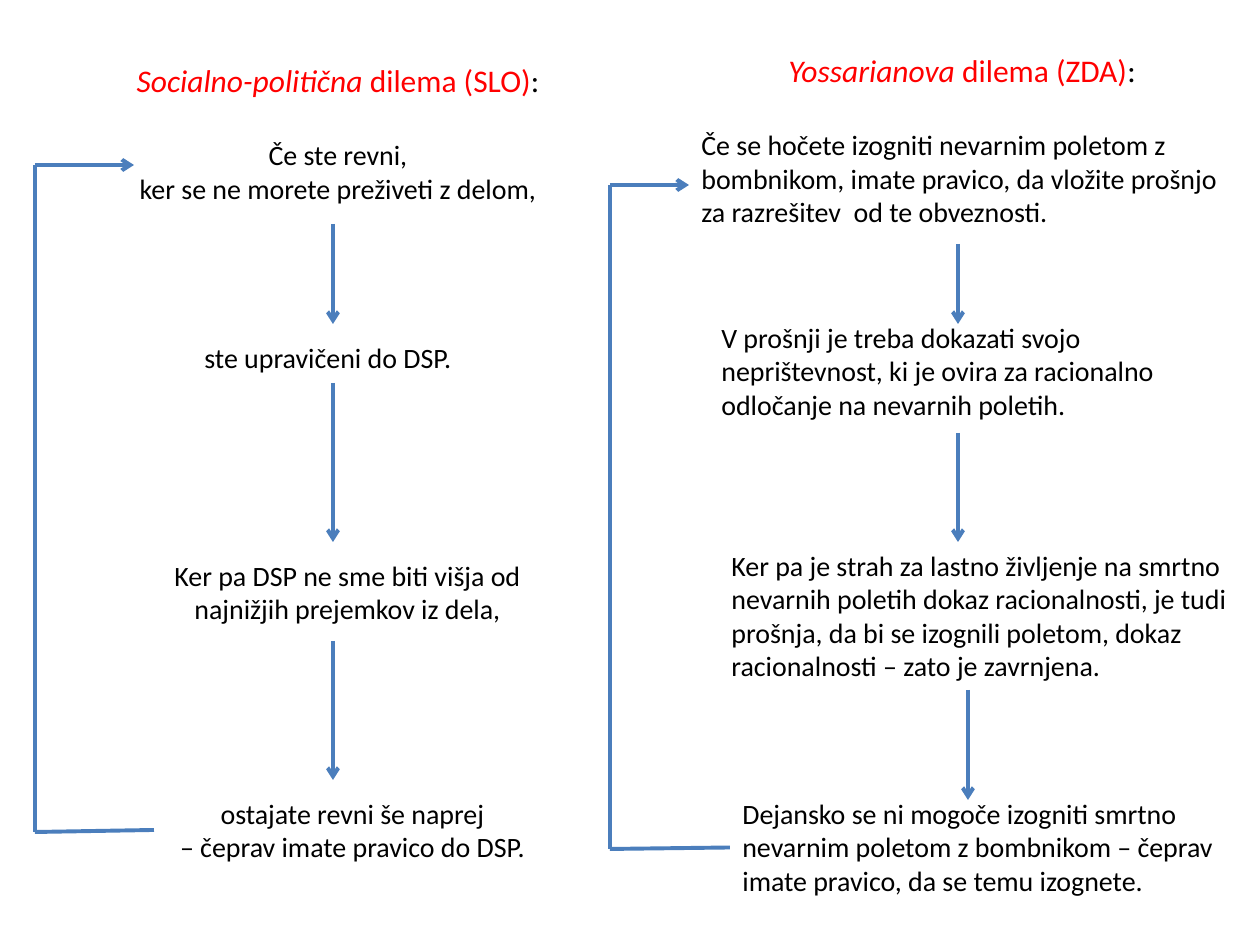
from pptx import Presentation
from pptx.dml.color import RGBColor
from pptx.enum.shapes import MSO_CONNECTOR
from pptx.enum.text import MSO_AUTO_SIZE, PP_ALIGN
from pptx.oxml.ns import qn
from pptx.util import Pt
from lxml import etree

LINE = MSO_CONNECTOR.STRAIGHT
LEFT, MID = PP_ALIGN.LEFT, PP_ALIGN.CENTER
FIT = MSO_AUTO_SIZE.SHAPE_TO_FIT_TEXT
SCALE = 914400 / 126  # EMU per px
RED, BLACK, BLUE = "FF0000", "000000", "4B7EBC"

deck = Presentation()
deck.slide_width, deck.slide_height = round(1260 * SCALE), round(945 * SCALE)
slide = deck.slides.add_slide(deck.slide_layouts[6])


def add_text(place, paras):
    """Each paragraph: alignment, space before, runs of (text, size, colour, italic)."""
    box = slide.shapes.add_textbox(*[round(n * SCALE) for n in place])
    frame = box.text_frame
    frame.word_wrap = True
    frame.auto_size = FIT
    for i, (align, gap, runs) in enumerate(paras):
        para = frame.paragraphs[0] if i == 0 else frame.add_paragraph()
        para.alignment = align
        para.space_before = Pt(gap)
        for text, size, color, slant in runs:
            run = para.add_run()
            run.text = text
            font = run.font
            font.name, font.size, font.italic = "Calibri", Pt(size), slant
            font.color.rgb = RGBColor.from_string(color)
    return box


def add_line(x1, y1, x2, y2, arrow=False):
    line = slide.shapes.add_connector(LINE, *[round(n * SCALE) for n in (x1, y1, x2, y2)])
    line.line.width = Pt(2.25)
    line.line.color.rgb = RGBColor.from_string(BLUE)
    if arrow:
        etree.SubElement(line.line._get_or_add_ln(), qn("a:tailEnd"), type="arrow")
    etree.SubElement(line._element.spPr, qn("a:effectLst"))
    return line


# Headings, each followed by the first step of its column
heads = [
    ((105, 55, 466, 158), "Socialno-politična ", "dilema (SLO)", MID,
     ["Če ste revni,", "ker se ne morete preživeti z delom,"]),
    ((689, 45, 546, 190), "Yossarianova", " dilema (ZDA)", LEFT,
     ["Če se hočete izogniti nevarnim poletom z bombnikom, imate pravico, "
      "da vložite prošnjo za razrešitev  od te obveznosti."]),
]
for place, name, rest, align, lines in heads:
    paras = [(MID, 0, [(name, 18, RED, True), (rest, 18, RED, False), (":", 18, BLACK, False)])]
    for i, text in enumerate(lines):
        paras.append((align, 0 if i else 22, [(text, 16, BLACK, False)]))
    add_text(place, paras)

# Further steps, the last one closing the right-hand loop
steps = [
    ((164, 334, 328, 47), MID, ["ste upravičeni do DSP."]),
    ((134, 552, 427, 81), MID, ["Ker pa DSP ne sme biti višja od najnižjih prejemkov iz dela,"]),
    ((144, 790, 417, 81), MID, ["ostajate revni še naprej", "– čeprav imate pravico do DSP."]),
    ((709, 314, 515, 115), LEFT,
     ["V prošnji je treba dokazati svojo neprištevnost, ki je ovira za racionalno "
      "odločanje na nevarnih poletih."]),
    ((719, 542, 525, 149), LEFT,
     ["Ker pa je strah za lastno življenje na smrtno nevarnih poletih dokaz racionalnosti, "
      "je tudi prošnja, da bi se izognili poletom, dokaz racionalnosti – zato je zavrnjena."]),
    ((730, 790, 515, 115), LEFT,
     ["Dejansko se ni mogoče izogniti smrtno nevarnim poletom z bombnikom – "
      "čeprav imate pravico, da se temu izognete."]),
]
for place, align, lines in steps:
    last = add_text(place, [(align, 0, [(text, 16, BLACK, False)]) for text in lines])

# Arrows down from step to step
for x, top, end in [(333, 224, 324), (333, 383, 542), (333, 641, 780),
                    (958, 244, 324), (958, 433, 542), (968, 690, 800)]:
    add_line(x, top, x, end, True)

# Loops back to the first step
for x, top, low, tip, foot in [(35, 165, 832, 134, 154), (610, 185, 849, 689, 730)]:
    add_line(x, top, x, low)
    add_line(x, top, tip, top, True)
    base = add_line(x, low, foot, low - 2)
base.end_connect(last, 1)

deck.save("out.pptx")
